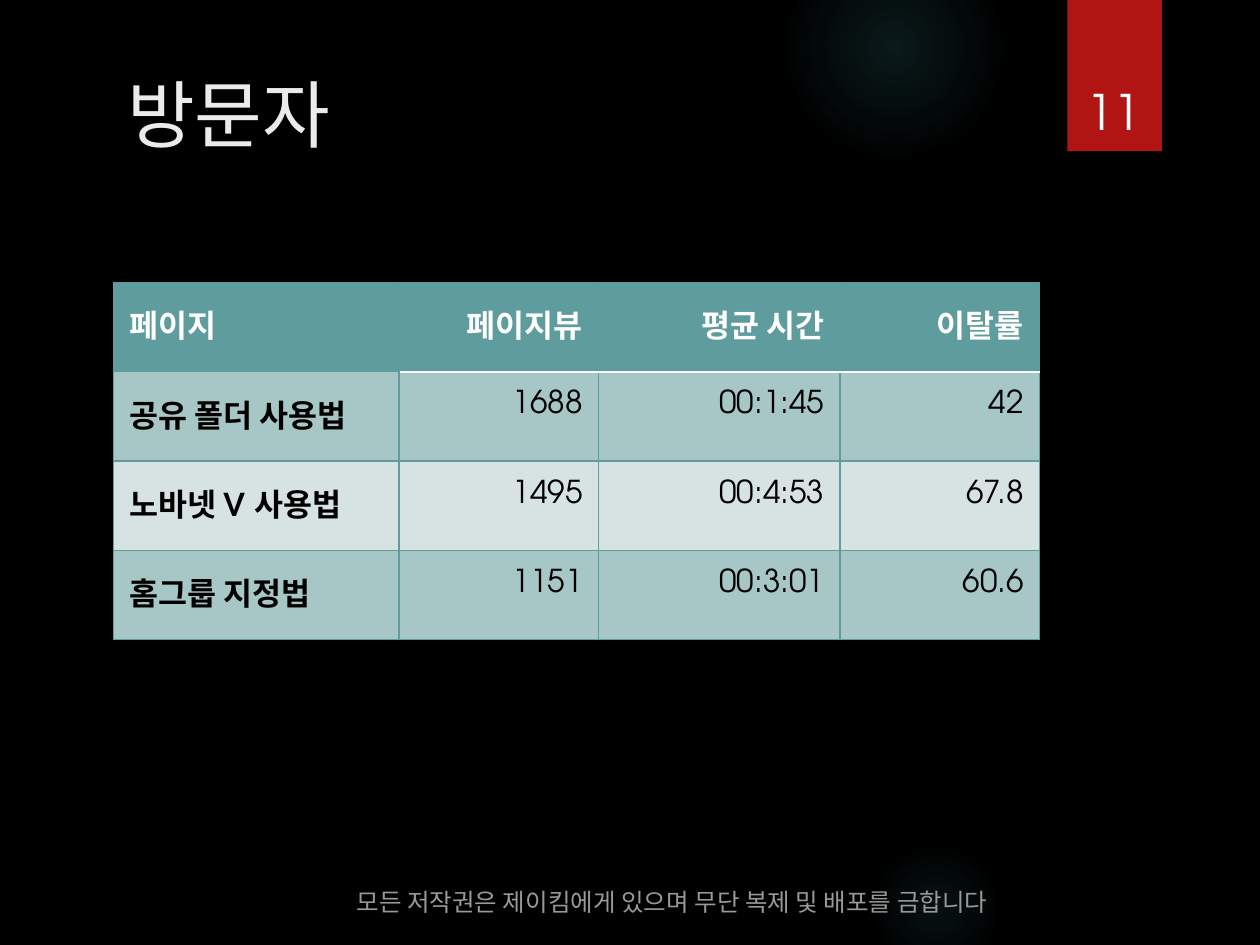
from lxml import etree
from pptx import Presentation
from pptx.dml.color import RGBColor
from pptx.enum import shapes, text
from pptx.oxml import parse_xml
from pptx.oxml.ns import nsdecls
from pptx.util import Pt

FONT = "TeX Gyre Adventor"
HUES = {"back": "000000", "glow": "50B9C1", "flag": "B01513", "title": "EBEBEB",
        "white": "FFFFFF", "black": "000000", "teal": "5F9C9D",
        "band": "A7C6C6", "plain": "D7E2E2", "foot": "999999"}
LEFT, RIGHT, MID = text.PP_ALIGN.LEFT, text.PP_ALIGN.RIGHT, text.PP_ALIGN.CENTER
TOP, BASE = text.MSO_ANCHOR.TOP, text.MSO_ANCHOR.BOTTOM


def write(frame, words, size=18, hue="white", bold=False, align=LEFT, anchor=TOP):
    frame.word_wrap = True
    frame.vertical_anchor = anchor
    para = frame.paragraphs[0]
    para.alignment = align
    run = para.add_run()
    run.text = words
    run.font.name, run.font.size, run.font.bold = FONT, Pt(size), bold
    run.font.color.rgb = RGBColor.from_string(HUES[hue])


def edge(cell, side, hue, width):
    props = cell._tc.get_or_add_tcPr()
    props.append(parse_xml(
        f'<a:ln{side} {nsdecls("a")} w="{Pt(width)}"><a:solidFill>'
        f'<a:srgbClr val="{HUES[hue]}"/></a:solidFill></a:ln{side}>'))


deck = Presentation()
deck.slide_width, deck.slide_height = Pt(720), Pt(540)
slide = deck.slides.add_slide(deck.slide_layouts[5])
slide.background.fill.solid()
slide.background.fill.fore_color.rgb = RGBColor.from_string(HUES["back"])

# Title
title = slide.shapes.title
title.left, title.top, title.width, title.height = Pt(65.5), Pt(36), Pt(528.5), Pt(54)
title.text_frame.auto_size = text.MSO_AUTO_SIZE.NONE
write(title.text_frame, "방문자", size=42, hue="title")

# Soft glows: left, top, size, gradient stops as (position, opacity)
glows = [(448, -36, 126, [(0, 14), (36, 7), (73, 0)]),
         (496, 480, 78, [(0, 9), (36, 5), (66, 0)])]
for left, top, size, stops in glows:
    glow = slide.shapes.add_shape(shapes.MSO_SHAPE.OVAL, Pt(left), Pt(top), Pt(size), Pt(size))
    glow.shadow.inherit = False
    glow.line.fill.background()
    glow.fill.gradient()
    grad = glow.fill._xPr.gradFill
    for part in list(grad):
        grad.remove(part)
    marks = "".join(f'<a:gs pos="{pos}000"><a:srgbClr val="{HUES["glow"]}">'
                    f'<a:alpha val="{alpha}000"/></a:srgbClr></a:gs>' for pos, alpha in stops)
    grad.append(parse_xml(f'<a:gsLst {nsdecls("a")}>{marks}</a:gsLst>'))
    grad.append(parse_xml(
        f'<a:path {nsdecls("a")} path="circle">'
        '<a:fillToRect l="50000" t="50000" r="50000" b="50000"/></a:path>'))

# Page flag
flag = slide.shapes.add_shape(shapes.MSO_SHAPE.RECTANGLE, Pt(610), 0, Pt(54), Pt(86.4))
flag.shadow.inherit = False
flag.fill.solid()
flag.fill.fore_color.rgb = RGBColor.from_string(HUES["flag"])
flag.line.fill.background()

# Visitor table
rows = [("페이지", "페이지뷰", "평균 시간", "이탈률"),
        ("공유 폴더 사용법", "1688", "00:1:45", "42"),
        ("노바넷 V 사용법", "1495", "00:4:53", "67.8"),
        ("홈그룹 지정법", "1151", "00:3:01", "60.6")]
widths = [163, 114, 138, 114]
grid = slide.shapes.add_table(4, 4, Pt(65), Pt(161.3), Pt(sum(widths)), Pt(204.4)).table
for col, width in zip(grid.columns, widths):
    col.width = Pt(width)
for r, row in enumerate(rows):
    grid.rows[r].height = Pt(51.1)
    head = r == 0
    for c, words in enumerate(row):
        cell = grid.cell(r, c)
        first = c == 0
        cell.margin_left = cell.margin_right = Pt(9)
        cell.margin_top = cell.margin_bottom = Pt(10.8)
        write(cell.text_frame, words, hue="white" if head else "black",
              bold=head or first, align=LEFT if first else RIGHT)
        rule = ("white", 1.5) if not first else ("teal", 0.75)
        edge(cell, "L", "teal", 1.5 if c == 1 and not head else 0.75)
        edge(cell, "R", "teal", 1.5 if first and not head else 0.75)
        edge(cell, "T", *(rule if r == 1 else ("teal", 0.75)))
        edge(cell, "B", *(rule if head else ("teal", 0.75)))
        cell.fill.solid()
        shade = "teal" if head else "band" if r % 2 else "plain"
        cell.fill.fore_color.rgb = RGBColor.from_string(HUES[shade])

# Footer and page number
notes = [((196.6, 498.2, 445, 28.8), "모든 저작권은 제이킴에게 있으며 무단 복제 및 배포를 금합니다",
          dict(size=14, hue="foot")),
         ((611.3, 23, 49.7, 60.5), "11", dict(size=28, align=MID))]
for place, words, style in notes:
    box = slide.shapes.add_textbox(*map(Pt, place))
    write(box.text_frame, words, anchor=BASE, **style)

deck.save("out.pptx")
